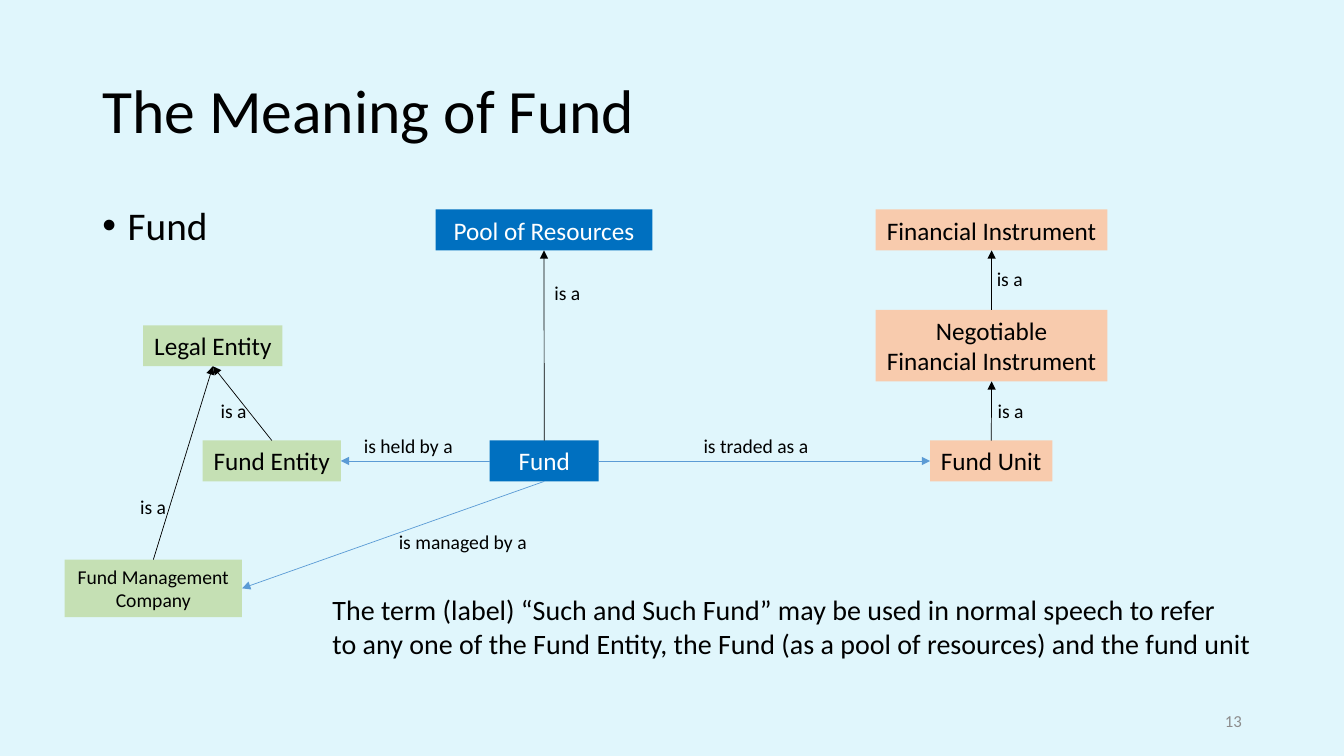
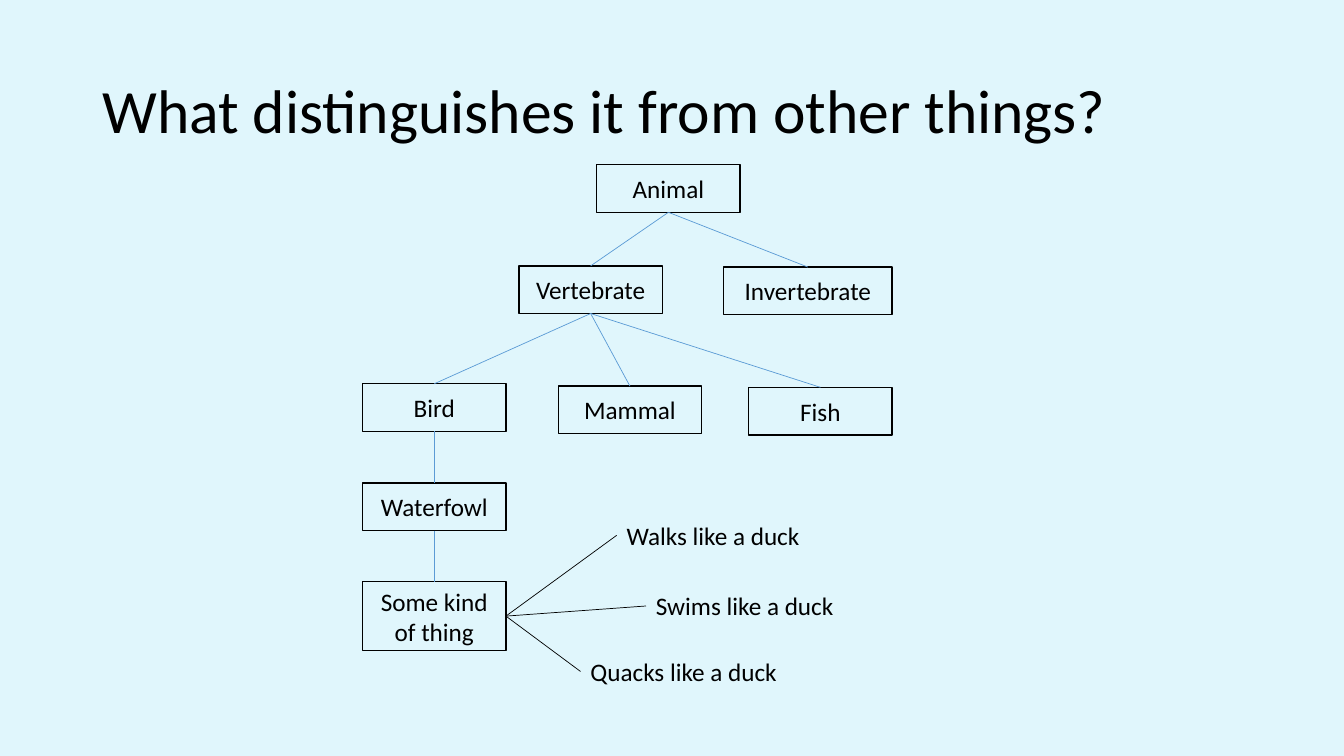
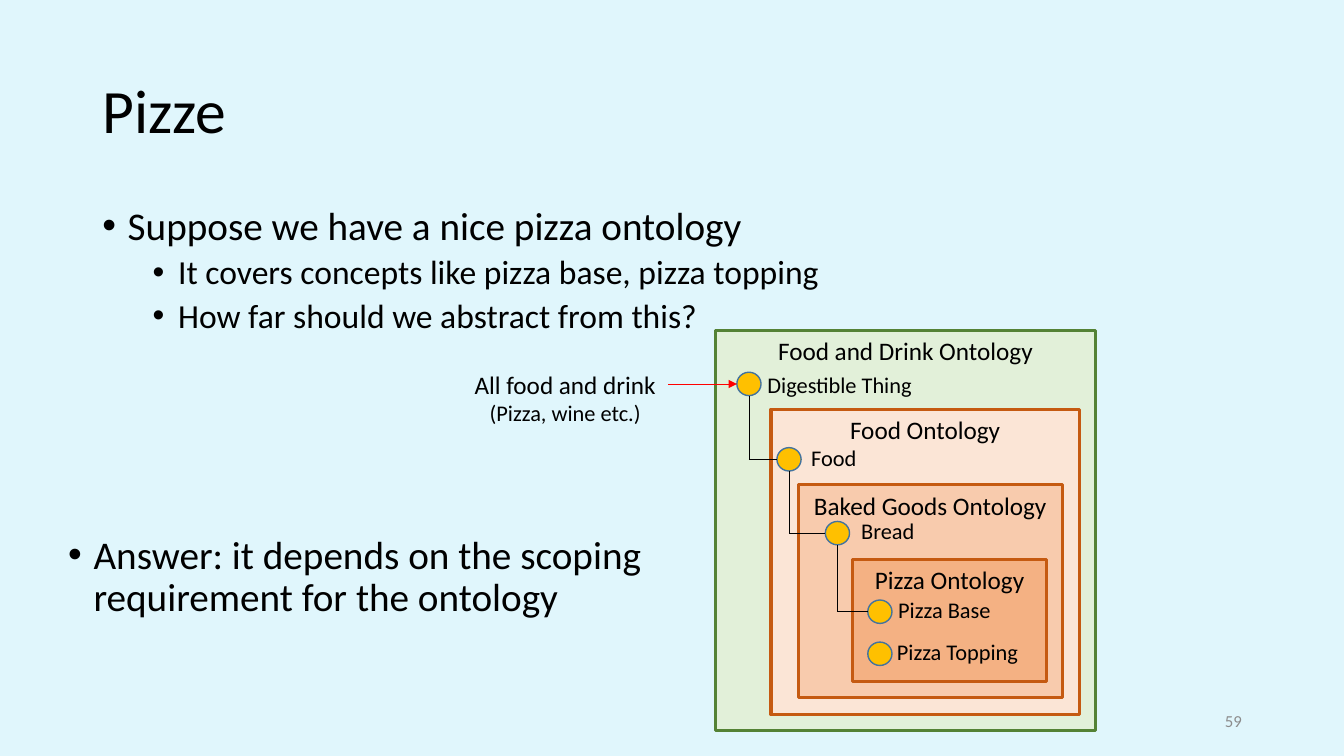
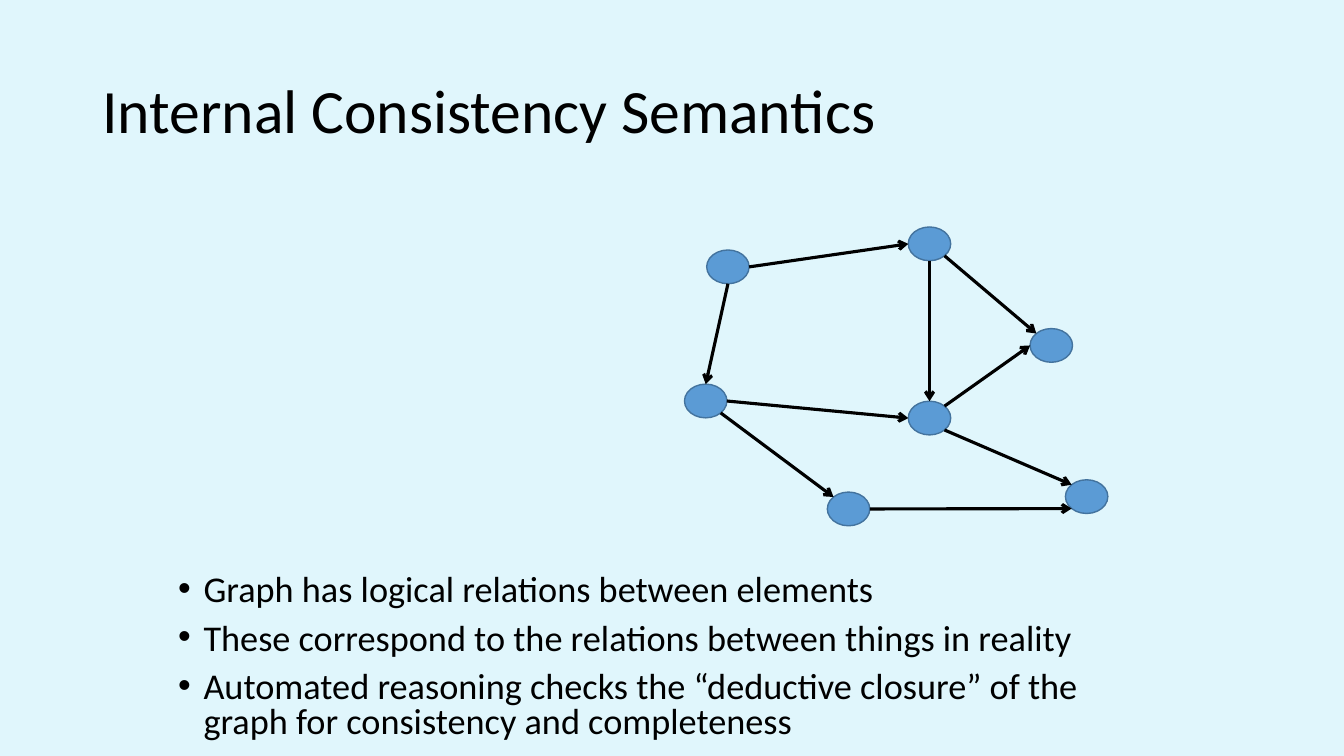
"""Build four slides on the meaning of concepts in an ontology."""
import math

import lxml.etree
import pptx
import pptx.dml.color
import pptx.enum.shapes
import pptx.enum.text
import pptx.oxml.ns
import pptx.util

Cm = pptx.util.Cm
Pt = pptx.util.Pt
SHAPE = pptx.enum.shapes.MSO_SHAPE
STRAIGHT = pptx.enum.shapes.MSO_CONNECTOR.STRAIGHT

FONT = "Calibri"
COLORS = {
    "background": "E0F6FC",
    "black": "000000",
    "white": "FFFFFF",
    "page": "8C8C8C",
    "pool": "0070C0",
    "instrument": "F8CBAD",
    "entity": "C5E0B4",
    "relation": "5B9BD5",
    "rim": "43739E",
    "concept": "FFC000",
    "pointer": "FF0000",
    "drink": "E2F0D9",
    "drink edge": "548235",
    "food": "FBE5D6",
    "food edge": "C55A11",
    "baked": "F8CBAD",
    "pizza": "F4B183",
}
ALIGN = {
    "left": pptx.enum.text.PP_ALIGN.LEFT,
    "center": pptx.enum.text.PP_ALIGN.CENTER,
    "right": pptx.enum.text.PP_ALIGN.RIGHT,
}
ANCHOR = {
    "top": pptx.enum.text.MSO_ANCHOR.TOP,
    "middle": pptx.enum.text.MSO_ANCHOR.MIDDLE,
}
SIDES = ["top", "left", "bottom", "right"]
COMPASS = ["E", "SE", "S", "SW", "W", "NW", "N", "NE"]
INDENT = Cm(0.64)
LEVEL_STEP = Cm(1.27)


def rgb(name):
    return pptx.dml.color.RGBColor.from_string(COLORS[name])


def add_xml(parent, tag, **attributes):
    return lxml.etree.SubElement(parent, pptx.oxml.ns.qn(tag), **attributes)


def write(holder, lines, size=18, color="black", align="left",
          anchor="top", wrap=True, spacing=None):
    frame = holder.text_frame
    frame.word_wrap = wrap
    frame.vertical_anchor = ANCHOR[anchor]
    for index, line in enumerate(lines):
        paragraph = frame.add_paragraph() if index else frame.paragraphs[0]
        paragraph.alignment = ALIGN[align]
        if spacing:
            paragraph.line_spacing = spacing
        run = paragraph.add_run()
        run.text = line
        run.font.name = FONT
        run.font.size = Pt(size)
        run.font.color.rgb = rgb(color)
    return holder


def add_text(slide, area, lines, **style):
    return write(slide.shapes.add_textbox(*map(Cm, area)), lines, **style)


def add_figure(slide, kind, area, fill=None, edge=None, weight=1):
    figure = slide.shapes.add_shape(kind, *map(Cm, area))
    figure.shadow.inherit = False
    if fill:
        figure.fill.solid()
        figure.fill.fore_color.rgb = rgb(fill)
    else:
        figure.fill.background()
    if edge:
        figure.line.color.rgb = rgb(edge)
        figure.line.width = Pt(weight)
    else:
        figure.line.fill.background()
    return figure


def add_bullets(slide, area, items, sizes, spacing=0.9):
    body = add_text(slide, area, [text for _, text in items], spacing=spacing)
    for paragraph, (level, _) in zip(body.text_frame.paragraphs, items):
        paragraph.level = level
        paragraph.space_before = Pt(5 if level else 10)
        paragraph.runs[0].font.size = Pt(sizes[level])
        properties = paragraph._p.get_or_add_pPr()
        properties.set("marL", str(INDENT + level * LEVEL_STEP))
        properties.set("indent", str(-INDENT))
        add_xml(properties, "a:buFont", typeface="Arial")
        add_xml(properties, "a:buChar", char="•")


def add_line(slide, start, end, color="black", weight=0.5, head=None):
    line = slide.shapes.add_connector(STRAIGHT, *start, *end)
    line.line.color.rgb = rgb(color)
    line.line.width = Pt(weight)
    if head:
        add_xml(line.line._get_or_add_ln(), "a:tailEnd", type=head)
    add_xml(line._element.spPr, "a:effectLst")
    return line


def link(slide, source, source_side, target, target_side, **style):
    line = add_line(slide, (0, 0), (0, 0), **style)
    line.begin_connect(source, SIDES.index(source_side))
    line.end_connect(target, SIDES.index(target_side))


def rim_point(oval, direction):
    angle = math.radians(45 * COMPASS.index(direction))
    return (round(oval.left + oval.width / 2 * (1 + math.cos(angle))),
            round(oval.top + oval.height / 2 * (1 + math.sin(angle))))


def start_slide(deck, title, page=None):
    slide = deck.slides.add_slide(deck.slide_layouts[6])
    add_text(slide, (2.33, 1.01, 29.21, 3.68), [title], size=44,
             anchor="middle", spacing=0.9)
    if page:
        add_text(slide, (23.93, 17.65, 7.62, 1.01), [page], size=12,
                 color="page", align="right", anchor="middle")
    return slide


def build_fund(deck):
    slide = start_slide(deck, "The Meaning of Fund", "13")
    add_bullets(slide, (2.33, 5.08, 29.21, 12.09), [(0, "Fund")], [28])
    terms = [
        ("Pool of Resources", "pool", (10.98, 5.28, 5.46, 1.03)),
        ("Fund", "pool", (12.34, 11.1, 2.75, 1.03)),
        ("Financial Instrument", "instrument", (22.07, 5.28, 5.84, 1.03)),
        ("Negotiable\nFinancial Instrument", "instrument",
         (22.07, 7.81, 5.84, 1.8)),
        ("Fund Unit", "instrument", (23.44, 11.1, 3.08, 1.03)),
        ("Legal Entity", "entity", (3.61, 8.2, 3.51, 1.03)),
        ("Fund Entity", "entity", (5.11, 11.1, 3.48, 1.03)),
        ("Fund Management\nCompany", "entity", (1.63, 14.1, 4.47, 1.45)),
    ]
    boxes = []
    for term, family, area in terms:
        box = add_figure(slide, SHAPE.RECTANGLE, area, family)
        boxes.append(write(
            box, term.split("\n"), align="center", anchor="middle", wrap=False,
            size=14 if term.startswith("Fund Management") else 18,
            color="white" if family == "pool" else "black"))
    pool, fund, instrument, negotiable, unit, legal, entity, company = boxes
    relations = [
        (fund, "top", pool, "bottom", "is a", (13.72, 6.96, 1.17)),
        (negotiable, "top", instrument, "bottom", "is a", (24.87, 6.6, 1.17)),
        (unit, "top", negotiable, "bottom", "is a", (24.89, 9.93, 1.17)),
        (entity, "top", legal, "bottom", "is a", (5.31, 9.93, 1.17)),
        (company, "top", legal, "bottom", "is a", (3.28, 12.34, 1.17)),
        (fund, "right", unit, "left", "is traded as a", (17.48, 10.8, 3.18)),
        (fund, "left", entity, "right", "is held by a", (8.92, 10.82, 2.77)),
        (fund, "bottom", company, "right", "is managed by a",
         (9.8, 13.23, 3.76)),
    ]
    for source, source_side, target, target_side, label, place in relations:
        link(slide, source, source_side, target, target_side, head="triangle",
             color="black" if label == "is a" else "relation")
        add_text(slide, (*place, 0.86), [label], size=14, wrap=False)
    add_text(slide, (8.13, 14.81, 23.9, 1.96), [
        "The term (label) “Such and Such Fund” may be used in normal speech"
        " to refer",
        "to any one of the Fund Entity, the Fund (as a pool of resources) and"
        " the fund unit",
    ], size=20, wrap=False)


def build_animals(deck):
    slide = start_slide(deck, "What distinguishes it from other things?")
    kinds = [
        ("Animal", None, 15.04, 4.15, 3.61, 1.2),
        ("Vertebrate", "Animal", 13.08, 6.7, 3.61, 1.2),
        ("Invertebrate", "Animal", 18.24, 6.73, 4.24, 1.2),
        ("Bird", "Vertebrate", 9.14, 9.67, 3.61, 1.2),
        ("Mammal", "Vertebrate", 14.07, 9.73, 3.61, 1.2),
        ("Fish", "Vertebrate", 18.87, 9.76, 3.61, 1.2),
        ("Waterfowl", "Bird", 9.14, 12.17, 3.61, 1.2),
        ("Some kind of thing", "Waterfowl", 9.14, 14.66, 3.61, 1.73),
    ]
    tree = {}
    for kind, parent, *area in kinds:
        box = add_figure(slide, SHAPE.RECTANGLE, area, edge="black")
        tree[kind] = write(box, [kind], align="center", anchor="middle")
        if parent:
            link(slide, tree[parent], "bottom", box, "top", color="relation")
    for trait, *area in [
        ("Walks like a duck", 15.54, 12.98, 4.93, 1.02),
        ("Swims like a duck", 16.28, 14.76, 5.03, 1.02),
        ("Quacks like a duck", 14.63, 16.41, 5.26, 1.02),
    ]:
        note = add_text(slide, area, [trait], wrap=False)
        link(slide, tree["Some kind of thing"], "right", note, "left")


def build_pizza(deck):
    slide = start_slide(deck, "Pizze", "59")
    add_bullets(slide, (2.33, 5.08, 29.21, 4.47), [
        (0, "Suppose we have a nice pizza ontology"),
        (1, "It covers concepts like pizza base, pizza topping"),
        (1, "How far should we abstract from this?"),
    ], [28, 24])
    add_bullets(slide, (1.47, 13.36, 15.47, 4.47), [
        (0, "Answer: it depends on the scoping requirement for the ontology"),
    ], [28])
    for name, fill, edge, area in [
        ("Food and Drink", "drink", "drink edge", (18.03, 8.33, 9.58, 10.08)),
        ("Food", "food", "food edge", (19.43, 10.31, 7.77, 7.7)),
        ("Baked Goods", "baked", "food edge", (20.12, 12.22, 6.65, 5.36)),
        ("Pizza", "pizza", "food edge", (21.49, 14.1, 4.88, 3.07)),
    ]:
        scope = add_figure(slide, SHAPE.RECTANGLE, area, fill, edge, 2.25)
        write(scope, [f"{name} Ontology"], align="center")
    dots = []
    for concept, x, y, label_top, label_width in [
        ("Digestible Thing", 18.57, 9.38, 9.12, 5.54),
        ("Food", 19.58, 11.28, 10.95, 3.23),
        ("Bread", 20.8, 13.14, 12.8, 3.51),
        ("Pizza Base", 21.87, 15.12, 14.78, 4.22),
        ("Pizza Topping", 21.87, 16.18, 15.85, 4.88),
    ]:
        dots.append(add_figure(slide, SHAPE.OVAL, (x, y, 0.61, 0.59),
                               "concept", "rim"))
        add_text(slide, (x - 0.18, label_top, label_width, 1.14), [concept],
                 size=16, align="center", anchor="middle")
    for broader, narrower in zip(dots[:3], dots[1:4]):
        start, end = rim_point(broader, "S"), rim_point(narrower, "W")
        corner = start[0], end[1]
        add_line(slide, start, corner)
        add_line(slide, corner, end)
    add_text(slide, (11.71, 9.17, 5.13, 1.02), ["All food and drink"],
             wrap=False)
    add_text(slide, (12.09, 9.93, 4.37, 0.94), ["(Pizza, wine etc.)"],
             size=16, wrap=False)
    target = rim_point(dots[0], "W")
    add_line(slide, (Cm(16.84), target[1]), target, "pointer",
             head="triangle")


def build_graph(deck):
    slide = start_slide(deck, "Internal Consistency Semantics")
    places = {
        "origin": (17.81, 6.3),
        "summit": (22.89, 5.72),
        "east": (25.96, 8.28),
        "west": (17.25, 9.68),
        "hub": (22.89, 10.11),
        "base": (20.85, 12.4),
        "goal": (26.85, 12.09),
    }
    elements = {
        name: add_figure(slide, SHAPE.OVAL, (*place, 1.07, 0.85),
                         "relation", "rim")
        for name, place in places.items()
    }
    for source, leaving, target, entering in [
        ("origin", "E", "summit", "W"),
        ("origin", "S", "west", "N"),
        ("summit", "SE", "east", "NW"),
        ("summit", "S", "hub", "N"),
        ("west", "E", "hub", "W"),
        ("west", "SE", "base", "NW"),
        ("hub", "NE", "east", "W"),
        ("hub", "SE", "goal", "NW"),
        ("base", "E", "goal", "SW"),
    ]:
        add_line(slide, rim_point(elements[source], leaving),
                 rim_point(elements[target], entering),
                 weight=2.25, head="arrow")
    add_bullets(slide, (4.24, 14.35, 25.4, 4.6), [
        (0, "Graph has logical relations between elements"),
        (0, "These correspond to the relations between things in reality"),
        (0, "Automated reasoning checks the “deductive closure” of the graph"
            " for consistency and completeness"),
    ], [25.9], spacing=0.8)


def main():
    deck = pptx.Presentation()
    deck.slide_width, deck.slide_height = Cm(33.87), Cm(19.05)
    backdrop = deck.slide_master.background.fill
    backdrop.solid()
    backdrop.fore_color.rgb = rgb("background")
    for build in (build_fund, build_animals, build_pizza, build_graph):
        build(deck)
    deck.save("out.pptx")


if __name__ == "__main__":
    main()
